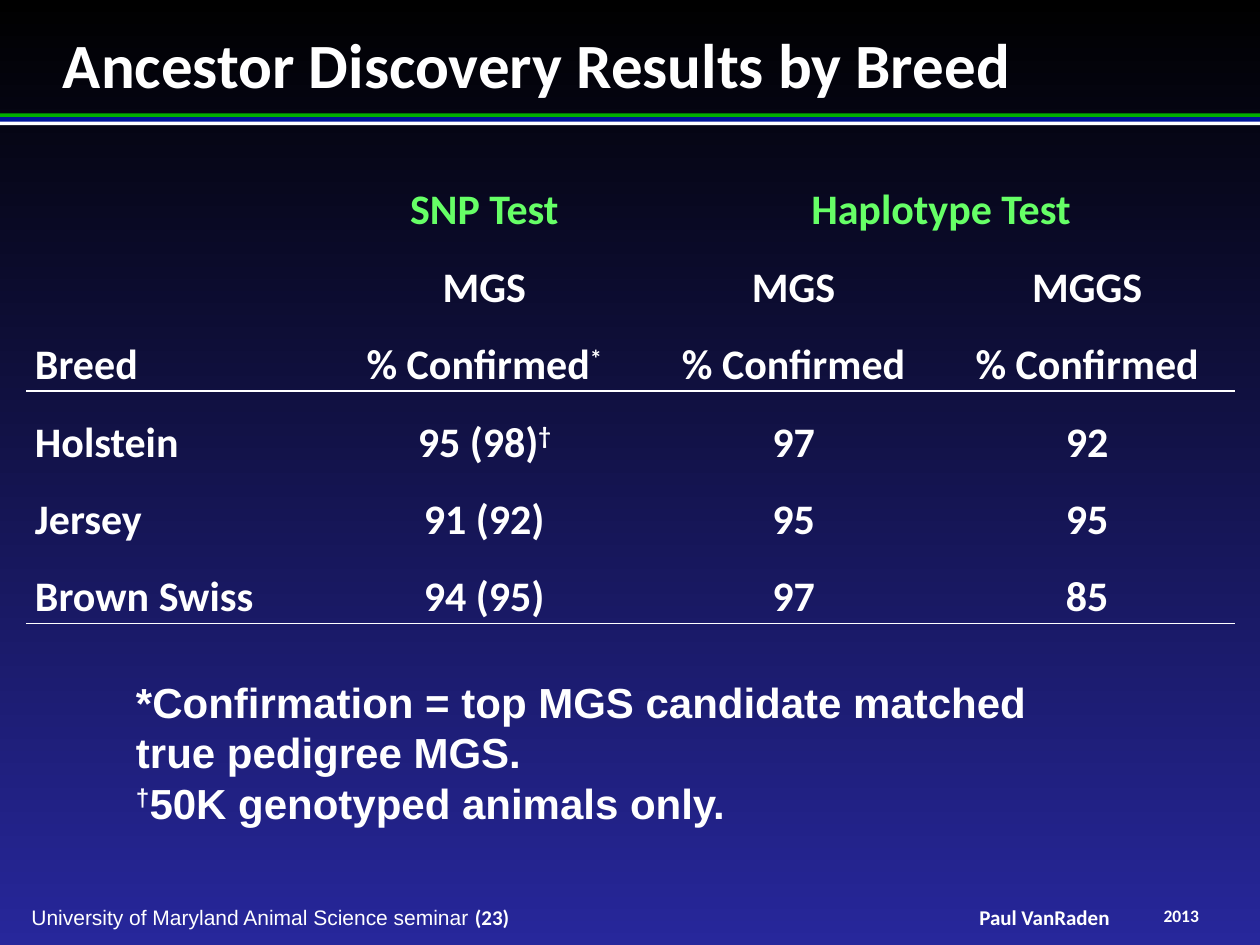
"""Build the ancestor discovery results slide."""
from lxml import etree
from pptx import Presentation
from pptx import util as u
from pptx.dml.color import RGBColor
from pptx.enum import shapes, text
from pptx.oxml.ns import qn

Pt = u.Pt
THEME = {
    "white": "FFFFFF", "accent": "66FF66", "top": "000000", "bottom": "27279B",
    "green": "01AF00", "blue": "001799",
    "head": "Calibri", "body": "Arial",
    "title": 36, "text": 24, "footer": 12, "year": 10,
}
NO_STYLE = "{2D5ABB26-0587-4C30-8999-92F81FD0307C}"
LEFT, CENTER = text.PP_ALIGN.LEFT, text.PP_ALIGN.CENTER
TOP, MIDDLE, BOTTOM = text.MSO_ANCHOR.TOP, text.MSO_ANCHOR.MIDDLE, text.MSO_ANCHOR.BOTTOM

TITLE = "Ancestor Discovery Results by Breed"
RESULTS = [
    ["", "SNP Test", "Haplotype Test", ""],
    ["", "MGS", "MGS", "MGGS"],
    ["Breed", "% Confirmed*", "% Confirmed", "% Confirmed"],
    ["Holstein", "95 (98)†", "97", "92"],
    ["Jersey", "91 (92)", "95", "95"],
    ["Brown Swiss", "94 (95)", "97", "85"],
]
RULED_ROWS = (2, 5)
COLUMN_WIDTHS = [168.5, 186.5, 167, 168.5]
ROW_HEIGHT = 44.25
NOTES = [
    "*Confirmation = top MGS candidate matched true pedigree MGS.",
    "†50K genotyped animals only.",
]
SEMINAR, PAGE = "University of Maryland Animal Science seminar ", "(23)"
SPEAKER, YEAR = "Paul VanRaden", "2013"
STRIPES = [("green", 64.8, 2.4), ("white", 69.3, 2.2), ("blue", 67, 2.6)]


def color(key):
    return RGBColor.from_string(THEME[key])


def style(font, size, face="head", ink="white", bold=True):
    font.size, font.name, font.bold = Pt(THEME[size]), THEME[face], bold
    font.color.rgb = color(ink)


def raise_run(run):
    run.font._element.set("baseline", "30000")


def add_text(slide, box, lines, size, face="head", align=LEFT, anchor=TOP,
             inset=(0, 0), wrap=True, bold=True):
    frame = slide.shapes.add_textbox(*map(Pt, box)).text_frame
    frame.word_wrap, frame.vertical_anchor = wrap, anchor
    frame.margin_left = frame.margin_right = Pt(inset[0])
    frame.margin_top = frame.margin_bottom = Pt(inset[1])
    for index, line in enumerate(lines):
        paragraph = frame.paragraphs[0] if index == 0 else frame.add_paragraph()
        paragraph.alignment = align
        style(paragraph.font, size, face, bold=bold)
        if line.startswith("†"):
            dagger = paragraph.add_run()
            dagger.text, line = line[0], line[1:]
            raise_run(dagger)
        paragraph.add_run().text = line
    return frame


def rule_below(cell):
    line = etree.Element(qn("a:lnB"), w=str(Pt(1)))
    fill = etree.SubElement(line, qn("a:solidFill"))
    etree.SubElement(fill, qn("a:srgbClr"), val=THEME["white"])
    cell._tc.get_or_add_tcPr().insert(0, line)


def fill_cell(cell, value, row, column):
    cell.fill.background()
    cell.vertical_anchor = BOTTOM
    cell.margin_left = cell.margin_right = Pt(5)
    cell.margin_top = cell.margin_bottom = 0
    paragraph = cell.text_frame.paragraphs[0]
    paragraph.alignment = CENTER if column else LEFT
    paragraph.line_spacing = 1.15
    style(paragraph.font, "text", ink="white" if row else "accent")
    label = value.rstrip("*†")
    for part in filter(None, (label, value[len(label):])):
        run = paragraph.add_run()
        run.text = part
        if part != label:
            raise_run(run)
    if row in RULED_ROWS:
        rule_below(cell)


def add_results(slide):
    frame = slide.shapes.add_table(
        len(RESULTS), len(COLUMN_WIDTHS), Pt(15), Pt(90.7),
        Pt(sum(COLUMN_WIDTHS)), Pt(ROW_HEIGHT * len(RESULTS)))
    table = frame.table
    table.first_row = table.horz_banding = False
    table._tbl.tblPr.find(qn("a:tableStyleId")).text = NO_STYLE
    for column, width in zip(table.columns, COLUMN_WIDTHS):
        column.width = Pt(width)
    for r, values in enumerate(RESULTS):
        table.rows[r].height = Pt(ROW_HEIGHT)
        for c, value in enumerate(values):
            fill_cell(table.cell(r, c), value, r, c)
    table.cell(0, 2).merge(table.cell(0, 3))


def add_backdrop(slide):
    fill = slide.background.fill
    fill.gradient()
    fill.gradient_angle = 270
    for stop, key, position in zip(fill.gradient_stops, ("top", "bottom"), (0, 1)):
        stop.color.rgb, stop.position = color(key), position
    for key, top, height in STRIPES:
        stripe = slide.shapes.add_shape(
            shapes.MSO_SHAPE.RECTANGLE, 0, Pt(top), Pt(720), Pt(height))
        stripe.shadow.inherit = False
        stripe.fill.solid()
        stripe.fill.fore_color.rgb = color(key)
        stripe.line.fill.background()


def add_footer(slide):
    add_text(slide, (553.7, 517, 86.4, 14.4), [SPEAKER], "footer",
             align=CENTER, anchor=MIDDLE, wrap=False)
    add_text(slide, (653, 517, 44, 12.2), [YEAR], "year", align=CENTER, anchor=MIDDLE)
    seminar = add_text(slide, (18, 517, 376, 14.4), [SEMINAR], "footer", "body",
                       anchor=MIDDLE, bold=False)
    page = seminar.paragraphs[0].add_run()
    page.text = PAGE
    style(page.font, "footer")


def main():
    deck = Presentation()
    deck.slide_width, deck.slide_height = Pt(720), Pt(540)
    slide = deck.slides.add_slide(deck.slide_layouts[6])
    add_backdrop(slide)
    add_footer(slide)
    add_text(slide, (36, 14.4, 648, 43.2), [TITLE], "title")
    add_results(slide)
    add_text(slide, (70.6, 383, 528, 124), NOTES, "text", "body", inset=(7.2, 3.6))
    deck.save("out.pptx")


if __name__ == "__main__":
    main()
